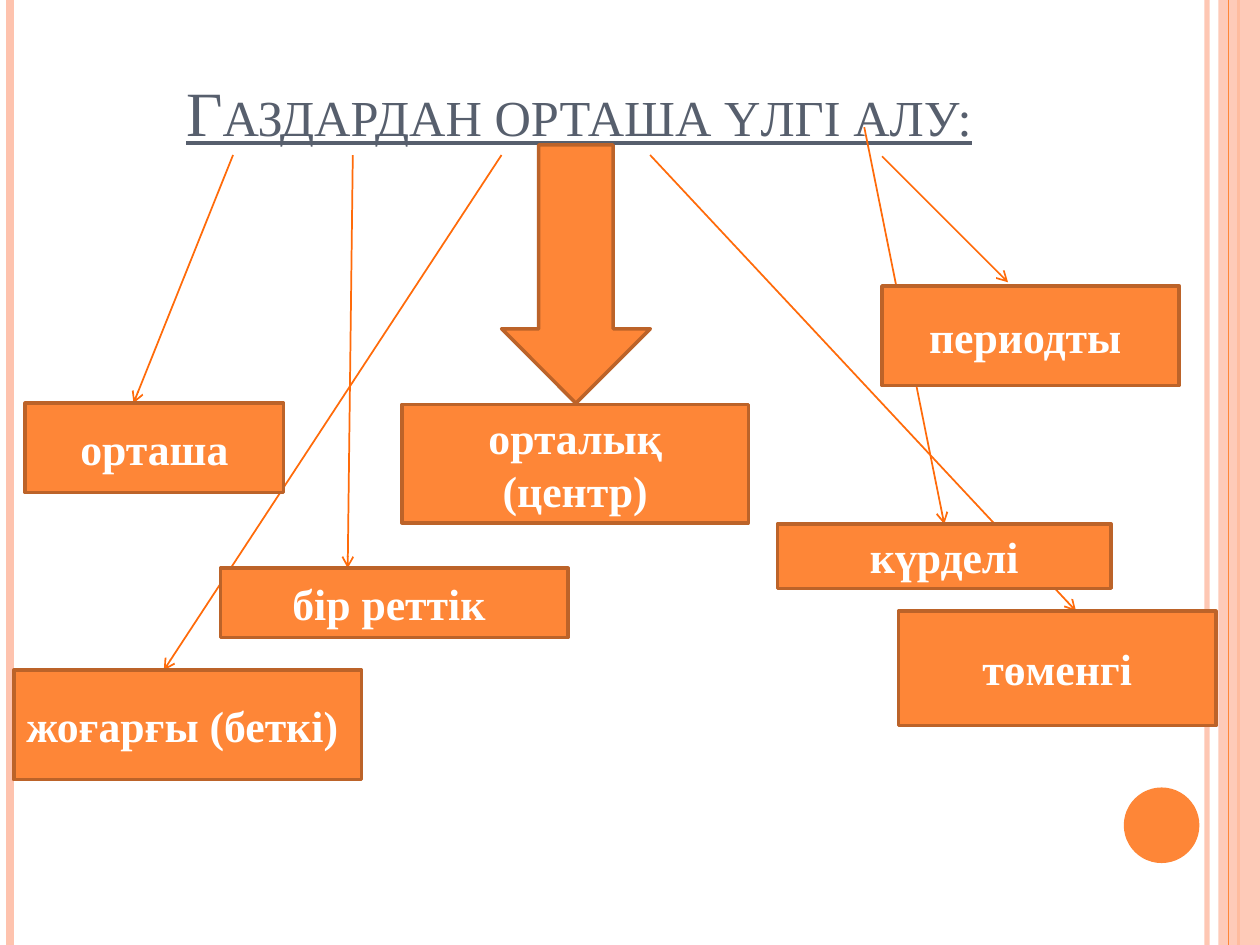
from dataclasses import dataclass

from lxml import etree
from pptx import Presentation
from pptx.dml.color import RGBColor
from pptx.enum.shapes import MSO_CONNECTOR, MSO_SHAPE
from pptx.enum.text import MSO_ANCHOR, MSO_AUTO_SIZE, PP_ALIGN
from pptx.oxml.ns import qn
from pptx.util import Pt

STRAIGHT = MSO_CONNECTOR.STRAIGHT
RECTANGLE = MSO_SHAPE.RECTANGLE
OVAL = MSO_SHAPE.OVAL
DOWN_ARROW = MSO_SHAPE.DOWN_ARROW
BOTTOM, MIDDLE = MSO_ANCHOR.BOTTOM, MSO_ANCHOR.MIDDLE
CENTER = PP_ALIGN.CENTER
NO_AUTOFIT = MSO_AUTO_SIZE.NONE
TITLE_ONLY = 5
TOP_SIDE = 0


@dataclass(frozen=True)
class Theme:
    font: str = "Times New Roman"
    title_size: float = 36
    label_size: float = 25
    title: str = "575F6D"
    label: str = "FFFFFF"
    accent: str = "FE8637"
    border: str = "BC6329"
    arrow: str = "FF6B0A"
    stripe: str = "FEC3AE"


THEME = Theme()
WIDTH, HEIGHT = 720, 540

METHODS = {
    "орташа": (14.4, 230.4, 147.6, 51.1),
    "периодты ": (504, 163.4, 169.9, 56.9),
    "жоғарғы (беткі) ": (7.9, 383, 198.7, 62.6),
    "төменгі": (513.4, 349.2, 181.4, 65.5),
    "бір реттік ": (126, 324.7, 198.7, 39.6),
    "күрделі": (444.2, 299.5, 190.8, 36.7),
    "орталық (центр)": (229.7, 231.1, 198, 67.7),
}
ARROWS = {
    "периодты ": (504, 89.3, 576, 161.3),
    "орташа": (133.2, 88.6, 76.3, 230.4),
    "бір реттік ": (201.6, 88.6, 198.7, 324.7),
    "күрделі": (493.9, 72.7, 539.6, 299.5),
    "жоғарғы (беткі) ": (286.6, 88.6, 93.6, 383),
    "төменгі": (371.5, 88.6, 614.9, 349.2),
}
CENTRED_ARROW = "күрделі"


def set_alpha(fill_owner, percent):
    color = next(fill_owner.iter(qn("a:srgbClr")))
    etree.SubElement(color, qn("a:alpha")).set("val", str(percent * 1000))


def add_line(slide, ends, color, width):
    line = slide.shapes.add_connector(STRAIGHT, *(Pt(v) for v in ends))
    line.line.color.rgb = RGBColor.from_string(color)
    line.line.width = Pt(width)
    etree.SubElement(line.element.spPr, qn("a:effectLst"))
    return line


def add_arrow(slide, ends):
    arrow = add_line(slide, ends, THEME.arrow, 1)
    outline = arrow.line.color and arrow.element.spPr.find(qn("a:ln"))
    etree.SubElement(outline, qn("a:tailEnd")).set("type", "arrow")
    return arrow


def add_figure(slide, preset, bounds, fill, border=None):
    figure = slide.shapes.add_shape(preset, *(Pt(v) for v in bounds))
    figure.shadow.inherit = False
    figure.fill.solid()
    figure.fill.fore_color.rgb = RGBColor.from_string(fill)
    if border:
        figure.line.color.rgb = RGBColor.from_string(border)
        figure.line.width = Pt(2)
    else:
        figure.line.fill.background()
    return figure


def write(frame, text, size, color, anchor):
    frame.text = text
    frame.word_wrap = True
    frame.auto_size = NO_AUTOFIT
    frame.vertical_anchor = anchor
    paragraph = frame.paragraphs[0]
    paragraph.alignment = CENTER
    font = paragraph.runs[0].font
    font.name = THEME.font
    font.size = Pt(size)
    font.color.rgb = RGBColor.from_string(color)
    return paragraph.runs[0]


def add_method(slide, label, bounds):
    method = add_figure(slide, RECTANGLE, bounds, THEME.accent, THEME.border)
    run = write(method.text_frame, label, THEME.label_size, THEME.label, MIDDLE)
    run.font.bold = True
    return method


def add_title(slide):
    title = slide.shapes.title
    title.left, title.top, title.width, title.height = (
        Pt(v) for v in (36.7, 31.7, 588.2, 56.9))
    run = write(title.text_frame, "Газдардан орташа үлгі алу:",
                THEME.title_size, THEME.title, BOTTOM)
    run.font.underline = True
    run.font._element.set("cap", "small")


def add_decoration(slide):
    def stripe(x, color, width):
        return add_line(slide, (x, 0, x, HEIGHT), color, width)

    set_alpha(stripe(689.8, THEME.stripe, 3).element.spPr, 93)
    stripe(5.8, THEME.stripe, 4.5)
    stripe(707.8, THEME.accent, 1.5)
    band = add_figure(slide, RECTANGLE, (696.2, 0, 23.8, HEIGHT), THEME.stripe)
    set_alpha(band.element.spPr, 87)
    stripe(702, THEME.accent, 0.75)
    add_figure(slide, OVAL, (642.2, 450, 43.2, 43.2), THEME.accent)


def main():
    deck = Presentation()
    deck.slide_width, deck.slide_height = Pt(WIDTH), Pt(HEIGHT)
    slide = deck.slides.add_slide(deck.slide_layouts[TITLE_ONLY])
    add_decoration(slide)
    add_title(slide)
    arrows = {label: add_arrow(slide, ends) for label, ends in ARROWS.items()}
    add_figure(slide, DOWN_ARROW, (286.6, 82.8, 85, 147.6),
               THEME.accent, THEME.border)
    methods = {label: add_method(slide, label, bounds)
               for label, bounds in METHODS.items()}
    arrows[CENTRED_ARROW].end_connect(methods[CENTRED_ARROW], TOP_SIDE)
    deck.save("out.pptx")


if __name__ == "__main__":
    main()
